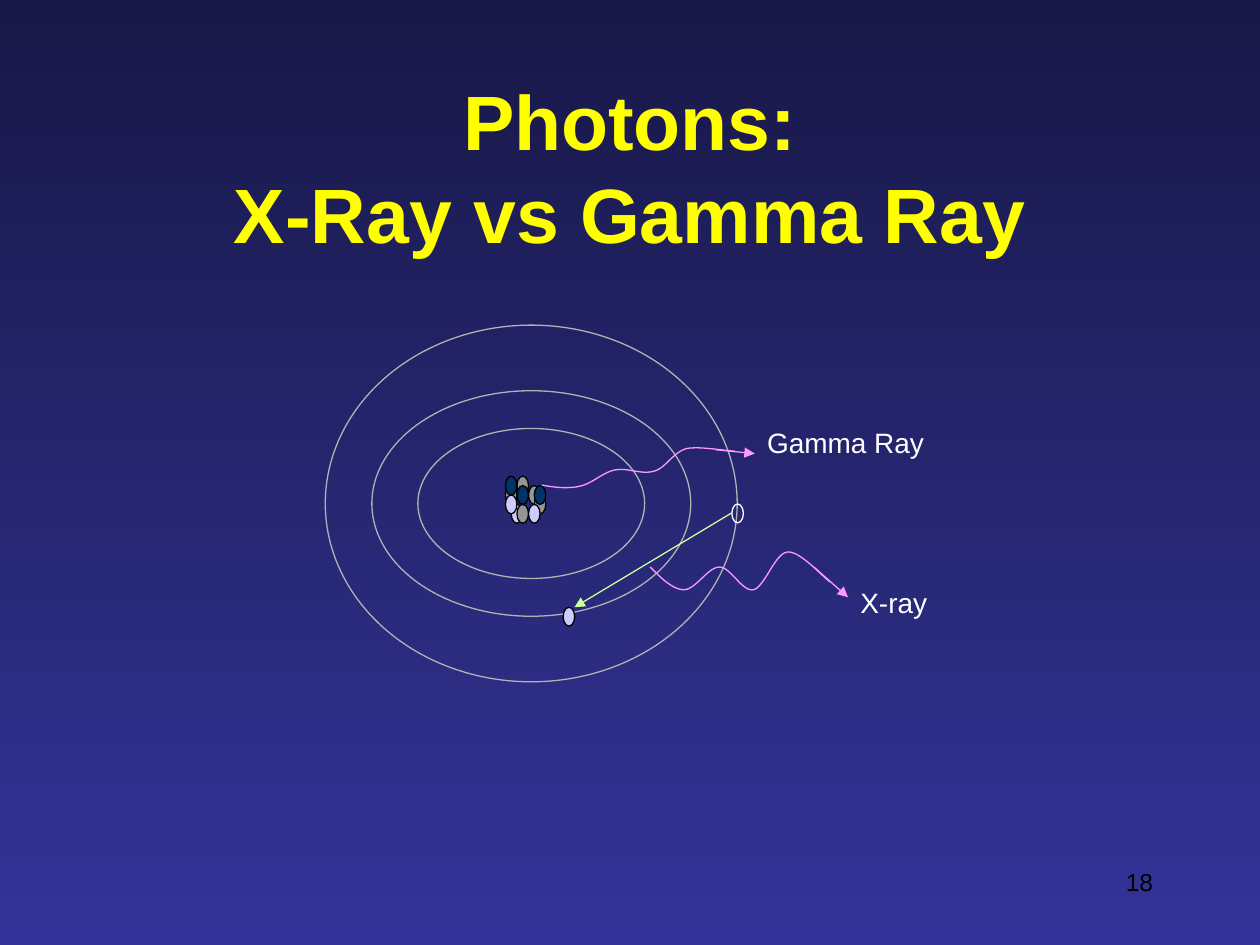
import pptx
import pptx.dml.color
import pptx.enum.shapes
import pptx.enum.text
import pptx.oxml
import pptx.oxml.ns
import pptx.util

Pt = pptx.util.Pt
RGBColor = pptx.dml.color.RGBColor
ALIGN = pptx.enum.text.PP_ALIGN
ANCHOR = pptx.enum.text.MSO_ANCHOR

NIGHT = RGBColor(0x18, 0x18, 0x47)
INDIGO = RGBColor(0x33, 0x33, 0x99)
YELLOW = RGBColor(0xFF, 0xFF, 0x00)
WHITE = RGBColor(0xFF, 0xFF, 0xFF)
BLACK = RGBColor(0x00, 0x00, 0x00)
SILVER = RGBColor(0xB2, 0xB2, 0xB2)
GREY = RGBColor(0x96, 0x96, 0x96)
LILAC = RGBColor(0xCC, 0xCC, 0xFF)
NAVY = RGBColor(0x00, 0x33, 0x66)
GREEN = RGBColor(0xCC, 0xFF, 0x99)
PINK = RGBColor(0xFF, 0x99, 0xFF)

# Content: text is (wording, left, top, width, height)
TITLE = ("Photons:\vX-Ray vs Gamma Ray", 60, 50, 600, 90)
PAGE_NUMBER = ("18", 516, 492, 150, 36)
LABELS = [
    ("X-ray", 484.6, 331.2, 52.6, 26.6),
    ("Gamma Ray", 431.3, 239.8, 104.4, 26.6),
]

# Atom: orbits share one centre, nucleons sit on a (column, row) grid
CENTRE = (303.6, 287.7)
ORBITS = [(235.4, 203.8), (182.2, 128.9), (129.6, 85.7)]
PARTICLE = (6.6, 10.8)
ELECTRONS = [(321.8, 347, LILAC, BLACK), (418.2, 288, None, WHITE)]
NUCLEUS, STEP = (288.8, 272.1), (3.3, 5.37)
NUCLEONS = [
    (1, 3, LILAC), (4, 1, GREY), (5, 2, GREY), (0, 1, GREY),
    (2, 0, GREY), (2, 3, GREY), (2, 1, NAVY), (4, 3, LILAC),
    (0, 0, NAVY), (5, 1, NAVY), (0, 2, LILAC),
]

# Rays: Bezier points (start, then two controls and an end per curve), arrow
TRANSITION = (418.3, 293, 328.3, 347)
RAYS = [
    ([(309.6, 277.2),
      (316.8, 278.6), (324.7, 279.4), (331.2, 277.9),
      (338.4, 276.5), (344.2, 270), (351.4, 268.6),
      (358.6, 267.1), (366.5, 271.4), (373.7, 269.3),
      (380.2, 267.8), (384.5, 258.5), (392.4, 256.3),
      (400.3, 254.9), (415.4, 257.8), (419.8, 257.8)],
     (409, 257, 431.3, 259.2)),
    ([(371.5, 324),
      (378, 330.5), (384.5, 337), (391, 337),
      (397.4, 337), (404.6, 324), (411.1, 324),
      (417.6, 324), (424.1, 338.4), (430.6, 337),
      (437, 335.5), (442.8, 316.1), (450, 315.4),
      (457.2, 314.6), (470.2, 329.8), (474.5, 332.6)],
     (465.1, 324, 484.6, 341.3)),
]
CURVE_STEPS = 12


def add_text(shapes, content, size, color, align=ALIGN.LEFT, bold=False,
             wrap=True, anchor=ANCHOR.TOP, spacing=None):
    wording, *place = content
    box = shapes.add_textbox(*map(Pt, place))
    box.text_frame.word_wrap = wrap
    box.text_frame.vertical_anchor = anchor
    paragraph = box.text_frame.paragraphs[0]
    paragraph.text = wording
    paragraph.alignment = align
    paragraph.line_spacing = spacing
    formats = {"name": "Arial", "size": Pt(size), "bold": bold}
    for span in paragraph.runs:
        for name, value in formats.items():
            setattr(span.font, name, value)
        span.font.color.rgb = color


def style(shape, line, fill=None):
    shape.shadow.inherit = False
    shape.line.color.rgb = line
    shape.line.width = Pt(0.75)
    if fill is None:
        shape.fill.background()
    else:
        shape.fill.solid()
        shape.fill.fore_color.rgb = fill


def add_ellipse(shapes, left, top, size, line, fill=None):
    oval = pptx.enum.shapes.MSO_SHAPE.OVAL
    style(shapes.add_shape(oval, Pt(left), Pt(top), *map(Pt, size)), line, fill)


def add_arrow(shapes, ends, color):
    straight = pptx.enum.shapes.MSO_CONNECTOR.STRAIGHT
    arrow = shapes.add_connector(straight, *map(Pt, ends))
    arrow.line.color.rgb = color
    arrow.line.width = Pt(0.75)
    outline = arrow.line._get_or_add_ln()
    head = pptx.oxml.parse_xml(
        f'<a:tailEnd {pptx.oxml.ns.nsdecls("a")} type="triangle"/>')
    outline.append(head)
    outline.addnext(pptx.oxml.parse_xml(
        f'<a:effectLst {pptx.oxml.ns.nsdecls("a")}/>'))


def curve_point(points, t):
    weights = ((1 - t) ** 3, 3 * t * (1 - t) ** 2, 3 * t ** 2 * (1 - t), t ** 3)
    return tuple(Pt(sum(w * p[axis] for w, p in zip(weights, points)))
                 for axis in (0, 1))


def add_wave(shapes, points, color):
    builder = shapes.build_freeform(*map(Pt, points[0]))
    vertices = [curve_point(points[i:i + 4], n / CURVE_STEPS)
                for i in range(0, len(points) - 1, 3)
                for n in range(1, CURVE_STEPS + 1)]
    builder.add_line_segments(vertices, close=False)
    style(builder.convert_to_shape(), color)


def main():
    deck = pptx.Presentation()
    deck.slide_width, deck.slide_height = Pt(720), Pt(540)
    page = deck.slides.add_slide(deck.slide_layouts[6])

    # Background
    backdrop = page.background.fill
    backdrop.gradient()
    backdrop.gradient_angle = 270
    for stop, position, color in zip(backdrop.gradient_stops, (0, 1),
                                     (NIGHT, INDIGO)):
        stop.position = position
        stop.color.rgb = color

    add_text(page.shapes, TITLE, 44, YELLOW, ALIGN.CENTER, bold=True,
             anchor=ANCHOR.MIDDLE, spacing=Pt(53))

    # Atom
    diagram = page.shapes.add_group_shape().shapes
    for width, height in ORBITS:
        add_ellipse(diagram, CENTRE[0] - width / 2, CENTRE[1] - height / 2,
                    (width, height), SILVER)
    for left, top, fill, line in ELECTRONS:
        add_ellipse(diagram, left, top, PARTICLE, line, fill)
    for column, row, fill in NUCLEONS:
        add_ellipse(diagram, NUCLEUS[0] + column * STEP[0],
                    NUCLEUS[1] + row * STEP[1], PARTICLE, BLACK, fill)

    # Electron transition and emitted rays
    add_arrow(diagram, TRANSITION, GREEN)
    for points, ends in RAYS:
        add_wave(diagram, points, PINK)
        add_arrow(diagram, ends, PINK)
    for label in LABELS:
        add_text(diagram, label, 16, WHITE, wrap=False)

    add_text(page.shapes, PAGE_NUMBER, 14, BLACK, ALIGN.RIGHT)
    deck.save("out.pptx")


if __name__ == "__main__":
    main()
